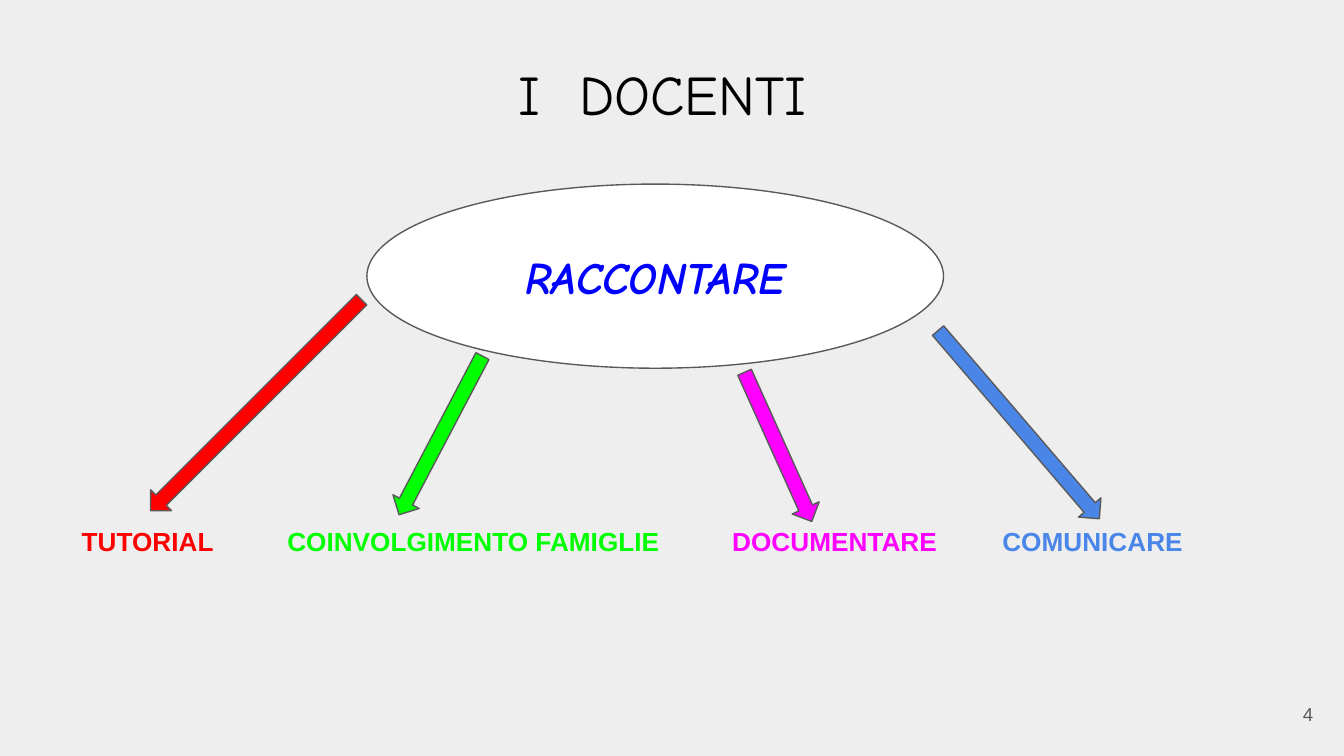
import math

from lxml import etree
from pptx import Presentation, util as u
from pptx.dml.color import RGBColor
from pptx.enum import shapes, text
from pptx.oxml.ns import qn

W = 10
H = W * 9 / 16
SHAFT = 0.22
GREY = "595959"
TITLE = ("I", " ", "DOCENTI")
TITLE_GAP = 11  # extra points after the space between the title words
CENTRE = "RACCONTARE"
LABEL_BOX = (0.51, 3.81, 9.13, 0.44)
# label, colour, label offset in its line, arrow tail, arrow tip
BRANCHES = [
    ("TUTORIAL", "FF0000", 0, (2.69, 2.23), (1.12, 3.8)),
    ("COINVOLGIMENTO FAMIGLIE", "00FF00", 1.53, (3.59, 2.65), (2.97, 3.83)),
    ("DOCUMENTARE", "FF00FF", 4.84, (5.54, 2.77), (6.04, 3.88)),
    ("COMUNICARE", "4A86E8", 6.85, (6.98, 2.46), (8.18, 3.86)),
]


def rgb(value):
    return RGBColor.from_string(value)


def place(sp, x, y, w, h):
    sp.left, sp.top, sp.width, sp.height = map(u.Inches, (x, y, w, h))


def prepare(sp, anchor=text.MSO_ANCHOR.TOP, align=text.PP_ALIGN.LEFT):
    """Set the shape's text margins and alignment; return its first paragraph."""
    tf = sp.text_frame
    tf.word_wrap = True
    tf.auto_size = text.MSO_AUTO_SIZE.NONE
    tf.vertical_anchor = anchor
    tf.margin_left = tf.margin_right = u.Inches(0.1)
    tf.margin_top = tf.margin_bottom = u.Inches(0.1)
    p = tf.paragraphs[0]
    p.alignment = align
    return p


def add_run(p, words, size, color, font="Arial", bold=False, italic=False):
    r = p.add_run()
    r.text = words
    r.font.size, r.font.name = u.Pt(size), font
    r.font.bold, r.font.italic = bold, italic
    r.font.color.rgb = rgb(color)
    return r


def add_preset(s, kind, box, fill):
    sp = s.shapes.add_shape(kind, *map(u.Inches, box))
    sp.shadow.inherit = False
    sp.fill.solid()
    sp.fill.fore_color.rgb = rgb(fill)
    sp.line.color.rgb = rgb(GREY)
    sp.line.width = u.Pt(0.75)
    return sp


def add_arrow(s, tail, tip, color):
    """Draw a down arrow turned so that it runs from tail to tip."""
    (x1, y1), (x2, y2) = tail, tip
    length = math.dist(tail, tip)
    box = ((x1 + x2 - SHAFT) / 2, (y1 + y2 - length) / 2, SHAFT, length)
    sp = add_preset(s, shapes.MSO_SHAPE.DOWN_ARROW, box, color)
    sp.rotation = math.degrees(math.atan2(x1 - x2, y2 - y1))


def add_labels(s):
    p = prepare(s.shapes.add_textbox(*map(u.Inches, LABEL_BOX)))
    tabs = etree.SubElement(p._p.get_or_add_pPr(), qn("a:tabLst"))
    for i, (label, color, offset, _, _) in enumerate(BRANCHES):
        if i:
            etree.SubElement(tabs, qn("a:tab"), pos=str(u.Inches(offset)), algn="l")
        add_run(p, "\t" + label if i else label, 14, color, bold=True)


def main():
    prs = Presentation()
    prs.slide_width, prs.slide_height = u.Inches(W), u.Inches(H)
    s = prs.slides.add_slide(prs.slide_layouts[5])
    s.background.fill.solid()
    s.background.fill.fore_color.rgb = rgb("EEEEEE")
    middle, centred = text.MSO_ANCHOR.MIDDLE, text.PP_ALIGN.CENTER

    place(s.shapes.title, 2.63, 0.34, 4.6, 0.71)
    p = prepare(s.shapes.title, align=centred)
    for words in TITLE:
        r = add_run(p, words, 30, "000000", "Comic Neue")
        if words == " ":
            r.font._element.set("spc", str(TITLE_GAP * 100))

    number = s.shapes.add_textbox(*map(u.Inches, (9.27, 5.1, 0.6, 0.43)))
    add_run(prepare(number, middle, text.PP_ALIGN.RIGHT), "4", 10, GREY)

    oval = add_preset(s, shapes.MSO_SHAPE.OVAL, (2.73, 1.37, 4.29, 1.37), "FFFFFF")
    add_run(prepare(oval, middle, centred), CENTRE, 24, "0000FF", "Comic Neue",
            bold=True, italic=True)

    add_labels(s)
    for _, color, _, tail, tip in BRANCHES:
        add_arrow(s, tail, tip, color)
    prs.save("out.pptx")


if __name__ == "__main__":
    main()
